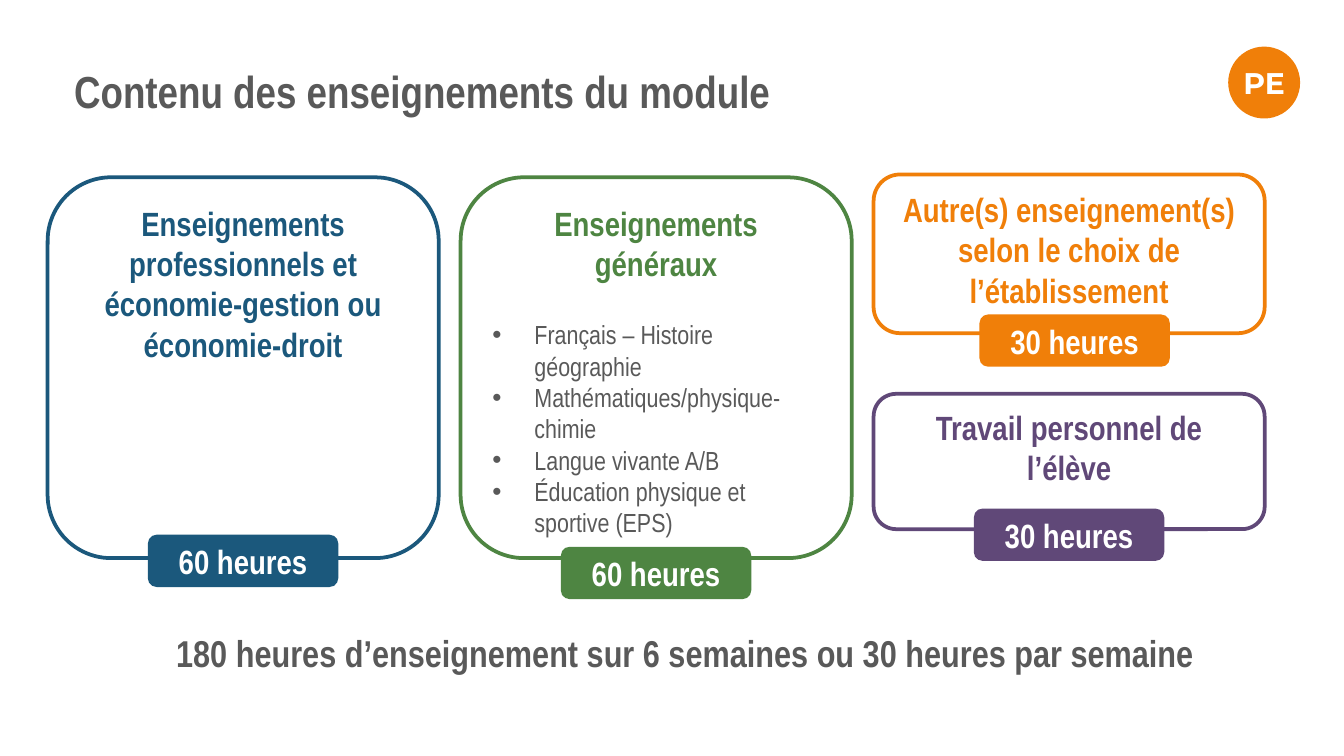
from pptx import Presentation
from pptx.util import Pt
from pptx.dml.color import RGBColor
from pptx.enum.shapes import MSO_SHAPE
from pptx.enum.text import MSO_ANCHOR, PP_ALIGN
from lxml.etree import SubElement
from pptx.oxml.ns import qn

BLUE = RGBColor(0x1B, 0x58, 0x7C)
GREEN = RGBColor(0x4E, 0x85, 0x42)
ORANGE = RGBColor(0xF0, 0x7F, 0x09)
PURPLE = RGBColor(0x60, 0x48, 0x78)
GREY = RGBColor(0x59, 0x59, 0x59)
WHITE = RGBColor(0xFF, 0xFF, 0xFF)
FONT = "Arial Narrow"

# Content
TITLE = "Contenu des enseignements du module"
TOTAL = "180 heures d’enseignement sur 6 semaines ou 30 heures par semaine"
BADGE = "PE"
TOPICS = [
    "Français – Histoire géographie",
    "Mathématiques/physique-chimie",
    "Langue vivante A/B",
    "Éducation physique et sportive (EPS)",
]
# heading, topics, hours, colour, column, top, height, tag shift, tag top
CARDS = [
    ("Enseignements professionnels et économie-gestion ou économie-droit",
     [], "60 heures", BLUE, 0, 95, 204, 0, 286.5),
    ("Enseignements généraux",
     TOPICS, "60 heures", GREEN, 1, 95, 204, 0, 293),
    ("Autre(s) enseignement(s) selon le choix de l’établissement",
     [], "30 heures", ORANGE, 2, 93.5, 85, 3, 168.5),
    ("Travail personnel de l’élève",
     [], "30 heures", PURPLE, 2, 211, 72.5, 0, 272.5),
]

# Grid, in points
LEFT, STEP, CARD_W = 25.5, 221.25, 209.5
TAG_W, TAG_H = 102, 28
INDENT = 22.5


def style(para, size, color, bold=True, name=FONT, align=PP_ALIGN.CENTER):
    para.alignment = align
    for run in para.runs:
        font = run.font
        font.name, font.size, font.bold = name, Pt(size), bold
        font.color.rgb = color


def strip(frame):
    frame.margin_left = frame.margin_right = 0
    frame.margin_top = frame.margin_bottom = 0


def add_box(kind, x, y, w, h, fill, line=None):
    box = slide.shapes.add_shape(kind, Pt(x), Pt(y), Pt(w), Pt(h))
    box.shadow.inherit = False
    box.fill.solid()
    box.fill.fore_color.rgb = fill
    if line is None:
        box.line.fill.background()
    else:
        box.line.color.rgb = line
        box.line.width = Pt(2)
    return box


def add_label(box, text, size, name=FONT):
    frame = box.text_frame
    frame.text = text
    frame.vertical_anchor = MSO_ANCHOR.MIDDLE
    style(frame.paragraphs[0], size, WHITE, name=name)


def add_bullet(para):
    props = para._p.get_or_add_pPr()
    props.set("marL", str(Pt(INDENT)))
    props.set("indent", str(-Pt(INDENT)))
    SubElement(props, qn("a:buFont"), typeface="Arial")
    SubElement(props, qn("a:buChar"), char="•")


def set_line(box, text, x, y, w, size, align):
    box.left, box.top, box.width, box.height = Pt(x), Pt(y), Pt(w), Pt(28)
    frame = box.text_frame
    frame.text = text
    frame.word_wrap = True
    frame.vertical_anchor = MSO_ANCHOR.TOP
    strip(frame)
    para = frame.paragraphs[0]
    para.line_spacing = 0.9
    style(para, size, GREY, align=align)


deck = Presentation()
deck.slide_width, deck.slide_height = Pt(720), Pt(405)
slide = deck.slides.add_slide(deck.slide_layouts[5])

# Title and total
set_line(slide.shapes.title, TITLE, 39.75, 37.5, 680, 24, PP_ALIGN.LEFT)
total = slide.shapes.add_textbox(0, 0, 0, 0)
set_line(total, TOTAL, 25.5, 340.5, 683, 20, PP_ALIGN.CENTER)

# Cards
for head, topics, hours, color, col, top, high, shift, tag_y in CARDS:
    x = LEFT + col * STEP
    card = add_box(MSO_SHAPE.ROUNDED_RECTANGLE, x, top, CARD_W, high,
                   WHITE, color)
    frame = card.text_frame
    frame.text = head
    frame.vertical_anchor = MSO_ANCHOR.TOP
    style(frame.paragraphs[0], 18, color)
    for i, topic in enumerate(topics):
        para = frame.add_paragraph()
        para.text = topic
        add_bullet(para)
        if i == 0:
            para.space_before = Pt(19)
        style(para, 14, GREY, bold=False, align=PP_ALIGN.LEFT)

    # Hours tag on the lower edge
    tag_x = x + (CARD_W - TAG_W) / 2 + shift
    tag = add_box(MSO_SHAPE.ROUNDED_RECTANGLE, tag_x, tag_y, TAG_W, TAG_H,
                  color)
    add_label(tag, hours, 18)

# Round badge
badge = add_box(MSO_SHAPE.OVAL, 659, 26, 36.5, 36.5, ORANGE, ORANGE)
strip(badge.text_frame)
add_label(badge, BADGE, 16, "Montserrat")

deck.save("out.pptx")
